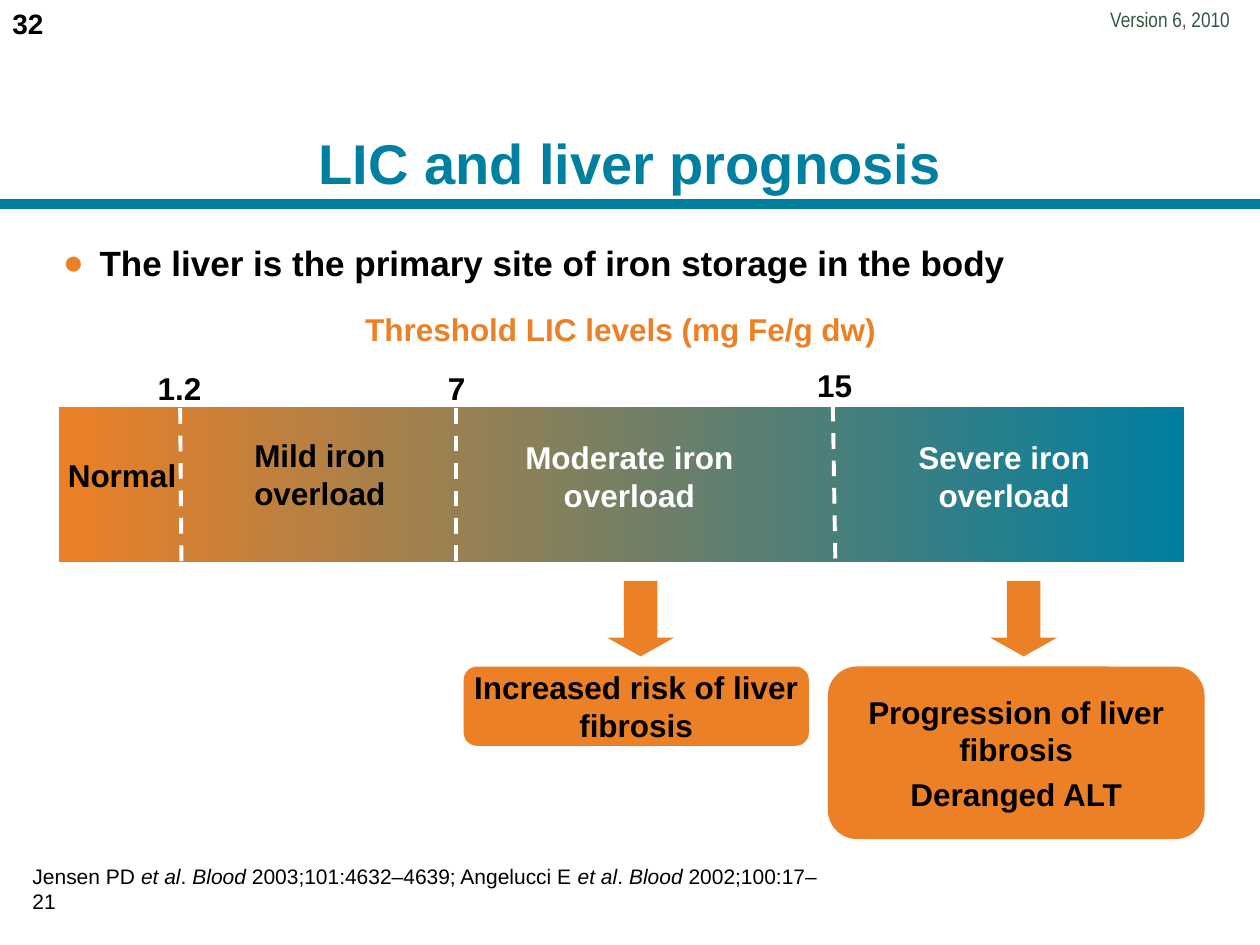
from lxml import etree
from pptx import Presentation
from pptx.dml.color import RGBColor
from pptx.enum.dml import MSO_LINE_DASH_STYLE as Dash
from pptx.enum.shapes import MSO_CONNECTOR as Connector, MSO_SHAPE as Shape
from pptx.enum.text import MSO_ANCHOR as Anchor, PP_ALIGN as Align
from pptx.oxml.ns import qn
from pptx.util import Inches, Pt

# The slide is a grid of 100 columns by 75 rows
COLUMNS, ROWS = 100, 75
TEAL, ORANGE, BLACK, WHITE, GREEN = "007FA1", "EC8026", "000000", "FFFFFF", "325844"


def color(value):
    return RGBColor.from_string(value)


class Painter:
    """Holds the style and the current slide."""

    font = "Arial"

    def __init__(self, deck):
        self.cell_x = deck.slide_width / COLUMNS
        self.cell_y = deck.slide_height / ROWS
        self.slide = deck.slides.add_slide(deck.slide_layouts[6])

    def place(self, column, row, *size):
        """Turn grid columns and rows into slide lengths."""
        units = (self.cell_x, self.cell_y) * 2
        return [round(v * unit) for v, unit in zip((column, row, *size), units)]

    def add_words(self, frame, paragraphs, size=18, ink=BLACK, bold=True,
                  align=Align.LEFT, font=None, before=0):
        """Each paragraph is a list of (text, italic) runs; a None run breaks the line."""
        for index, runs in enumerate(paragraphs):
            para = frame.paragraphs[0] if index == 0 else frame.add_paragraph()
            para.alignment = align
            para.space_before = Pt(before)
            for run in runs:
                if run is None:
                    para.add_line_break()
                    continue
                span = para.add_run()
                span.text, span.font.italic = run
                span.font.name = font or self.font
                span.font.size = Pt(size)
                span.font.bold = bold
                span.font.color.rgb = color(ink)

    def text(self, at, runs, anchor=Anchor.TOP, inset=True, wrap=True, **style):
        box = self.slide.shapes.add_textbox(*self.place(*at))
        frame = box.text_frame
        frame.word_wrap = wrap
        frame.vertical_anchor = anchor
        if not inset:
            frame.margin_left = frame.margin_right = 0
            frame.margin_top = frame.margin_bottom = 0
        if isinstance(runs, str):
            runs = [(runs, False)]
        self.add_words(frame, [runs], **style)
        return box

    def bullet(self, para, mark, ink, indent):
        props = para._p.get_or_add_pPr()
        props.set("marL", str(Inches(indent)))
        props.set("indent", str(-Inches(indent)))
        tint = etree.SubElement(props, qn("a:buClr"))
        etree.SubElement(tint, qn("a:srgbClr"), val=ink)
        etree.SubElement(props, qn("a:buFont"), typeface=self.font)
        etree.SubElement(props, qn("a:buChar"), char=mark)

    def shape(self, kind, at, fill=ORANGE, adjust=()):
        item = self.slide.shapes.add_shape(kind, *self.place(*at))
        item.shadow.inherit = False
        item.line.fill.background()
        for index, value in enumerate(adjust):
            item.adjustments[index] = value
        if isinstance(fill, str):
            item.fill.solid()
            item.fill.fore_color.rgb = color(fill)
        else:
            item.fill.gradient()
            item.fill.gradient_angle = 0
            for stop, ink in zip(item.fill.gradient_stops, fill):
                stop.color.rgb = color(ink)
        return item

    def outcome(self, at, paragraphs):
        frame = self.shape(Shape.ROUNDED_RECTANGLE, at, adjust=[0.17]).text_frame
        frame.word_wrap = False
        frame.vertical_anchor = Anchor.MIDDLE
        self.add_words(frame, paragraphs, align=Align.CENTER, before=4)

    def line(self, start, end, ink, width, dash=None):
        rule = self.slide.shapes.add_connector(
            Connector.STRAIGHT, *self.place(*start), *self.place(*end))
        rule.line.color.rgb = color(ink)
        rule.line.width = Pt(width)
        if dash:
            rule.line.dash_style = dash
        etree.SubElement(rule._element.spPr, qn("a:effectLst"))


def main():
    deck = Presentation()
    deck.slide_width, deck.slide_height = Inches(10), Inches(7.5)
    painter = Painter(deck)

    # Header: version, slide number, title and rule
    painter.text((86.6, 0, 12, 3), "Version 6, 2010", size=12, ink=GREEN,
                 bold=False, align=Align.RIGHT, font="Arial Narrow")
    painter.text((0, 0, 23.3, 5.2), "32", size=16)
    painter.line((0, 16.2), (COLUMNS, 16.2), TEAL, 6)
    painter.text((5, 3, 90, 12.5), "LIC and liver prognosis", anchor=Anchor.BOTTOM,
                 inset=False, size=32, ink=TEAL, align=Align.CENTER)

    # Key message
    message = painter.text((5, 19.2, 90, 5.7),
                           "The liver is the primary site of iron storage in the body",
                           inset=False, size=20)
    painter.bullet(message.text_frame.paragraphs[0], "●", ORANGE, 0.29)

    # Threshold scale
    painter.text((28, 24.1, 42.7, 4), "Threshold LIC levels (mg Fe/g dw)", ink=ORANGE)
    painter.shape(Shape.RECTANGLE, (4.7, 32.3, 89.3, 12.3), fill=(ORANGE, TEAL))
    thresholds = [  # label, label box, divider top, divider foot
        ("1.2", (4.5, 28.8, 19.5, 4), (14.3, 32.4), (14.4, 44.6)),
        ("7", (27.6, 28.8, 17.3, 4), (36.2, 32.4), (36.2, 44.6)),
        ("15", (56.9, 28.6, 18.7, 4), (66.1, 32.2), (66.3, 44.6)),
    ]
    for label, at, top, foot in thresholds:
        painter.text(at, label, align=Align.CENTER)
        painter.line(top, foot, WHITE, 2.25, Dash.DASH)

    # Overload bands
    painter.text((4.4, 35.7, 10.6, 4), "Normal", wrap=False)
    painter.text((19.2, 34.1, 19.3, 7), "Mild iron overload")
    for label, left, width in (("Moderate iron overload", 37.2, 25.5),
                               ("Severe iron overload", 67.4, 24.6)):
        painter.text((left, 34.3, width, 7), label, ink=WHITE, align=Align.CENTER)

    # Outcomes of the two upper bands
    for left in (48.2, 78.6):
        painter.shape(Shape.DOWN_ARROW, (left, 46.1, 5.3, 6), adjust=[0.5, 0.28])
    painter.outcome((36.8, 52.9, 27.4, 6.3),
                    [[("Increased risk of liver", False), None, ("fibrosis", False)]])
    painter.outcome((65.7, 52.9, 29.9, 13.7),
                    [[("Progression of liver", False), None, ("fibrosis", False)],
                     [("Deranged ALT", False)]])

    # References
    painter.text((1.6, 70, 65.6, 3), [
        ("Jensen PD ", False), ("et al", True), (". ", False), ("Blood", True),
        (" 2003;101:4632–4639; Angelucci E ", False), ("et al", True),
        (". ", False), ("Blood", True), (" 2002;100:17–21", False),
    ], anchor=Anchor.BOTTOM, size=12, bold=False)

    deck.save("out.pptx")


if __name__ == "__main__":
    main()
